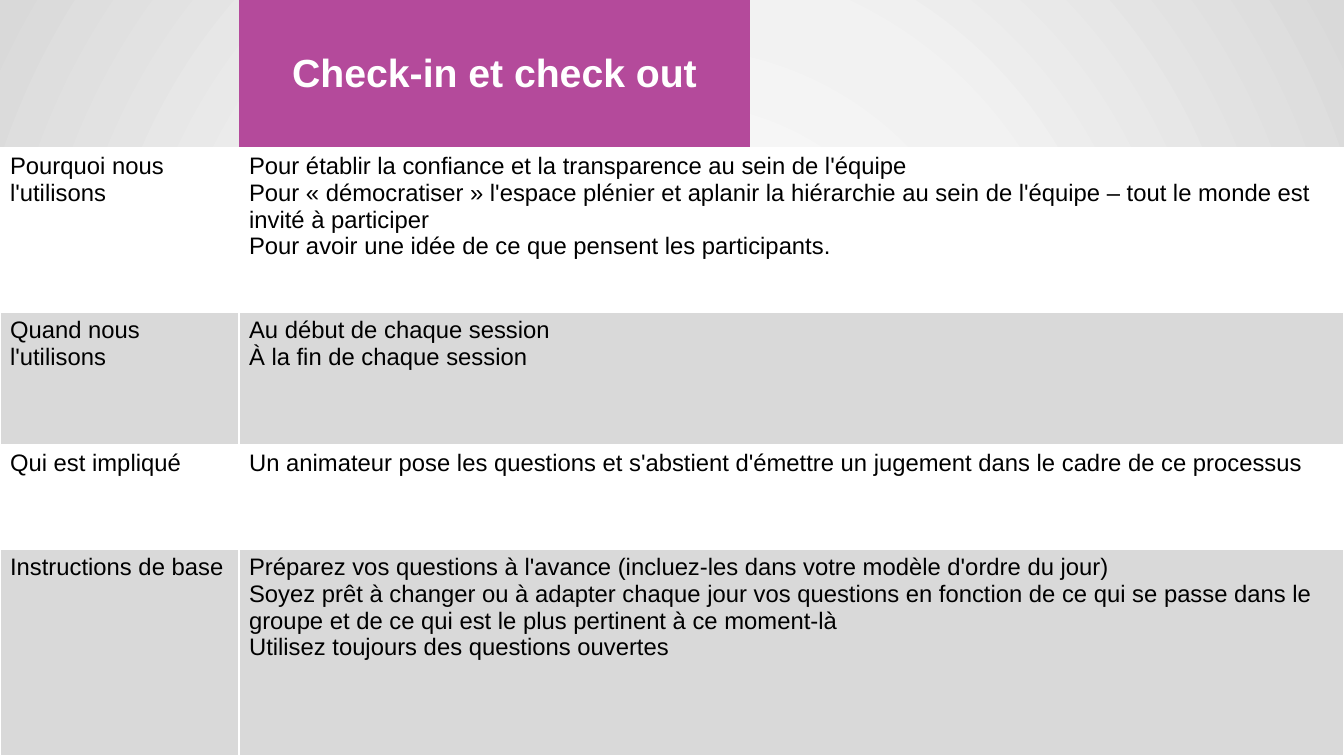
"""Build the check-in and check-out facilitation slide."""
from dataclasses import dataclass

from lxml import etree
from pptx import Presentation
from pptx.dml.color import RGBColor
from pptx.enum.text import MSO_ANCHOR, PP_ALIGN
from pptx.oxml.ns import qn
from pptx.util import Emu, Pt

CENTER, LEFT = PP_ALIGN.CENTER, PP_ALIGN.LEFT
MIDDLE, TOP = MSO_ANCHOR.MIDDLE, MSO_ANCHOR.TOP
EMU_PER_PX = 12192000 / 1344
WIDTH, HEIGHT = 1344, 756

COLUMN_WIDTHS = (239, 511, 258, 336)
ROW_HEIGHTS = (148, 164, 133, 104, 207)
HEADING = "Check-in et check out"
TOPICS = (
    ("Pourquoi nous l'utilisons", (
        "Pour établir la confiance et la transparence au sein de l'équipe",
        "Pour « démocratiser » l'espace plénier et aplanir la hiérarchie au sein "
        "de l'équipe – tout le monde est invité à participer",
        "Pour avoir une idée de ce que pensent les participants.",
    )),
    ("Quand nous l'utilisons", (
        "Au début de chaque session",
        "À la fin de chaque session",
    )),
    ("Qui est impliqué", (
        "Un animateur pose les questions et s'abstient d'émettre un jugement "
        "dans le cadre de ce processus",
    )),
    ("Instructions de base", (
        "Préparez vos questions à l'avance (incluez-les dans votre modèle "
        "d'ordre du jour)",
        "Soyez prêt à changer ou à adapter chaque jour vos questions en fonction "
        "de ce qui se passe dans le groupe et de ce qui est le plus pertinent à "
        "ce moment-là",
        "Utilisez toujours des questions ouvertes",
    )),
)


@dataclass(frozen=True)
class Theme:
    """Colours, font and type sizes of the slide."""
    font: str = "Arial"
    heading_size: int = 28
    body_size: int = 17
    ink: str = "000000"
    white: str = "FFFFFF"
    accent: str = "B44A9B"
    bands: tuple = ("FFFFFF", "D9D9D9")
    backdrop: tuple = ((0, "FFFFFF"), (50, "F2F2F2"), (100, "D9D9D9"))


def px(length):
    """Turn pixels into EMU."""
    return Emu(round(length * EMU_PER_PX))


def add_color(parent, color):
    """Append an RGB colour element."""
    etree.SubElement(parent, qn("a:srgbClr"), val=color)


class SlideBuilder:
    """Draw elements on one slide in one theme."""

    def __init__(self, slide, theme):
        """Keep the slide and its theme."""
        self.slide = slide
        self.theme = theme

    def backdrop(self):
        """Fill the background with a radial gradient."""
        self.slide.background.fill.gradient()
        gradient = next(self.slide.element.iter(qn("a:gradFill")))
        gradient.clear()
        stops = etree.SubElement(gradient, qn("a:gsLst"))
        for percent, color in self.theme.backdrop:
            add_color(etree.SubElement(stops, qn("a:gs"), pos=str(percent * 1000)), color)
        circle = etree.SubElement(gradient, qn("a:path"), path="circle")
        etree.SubElement(circle, qn("a:fillToRect"), dict.fromkeys("ltrb", "50000"))

    def grid(self, widths, heights):
        """Add a plain table with the given column widths and row heights."""
        table = self.slide.shapes.add_table(
            len(heights), len(widths), 0, 0, px(sum(widths)), px(sum(heights))).table
        table.first_row = table.horz_banding = False
        for column, width in zip(table.columns, widths):
            column.width = px(width)
        for row, height in zip(table.rows, heights):
            row.height = px(height)
        return table

    def borders(self, cell, color=None, sides="LRTB"):
        """Draw the sides of a cell, or hide them when no colour is given."""
        properties = cell._tc.get_or_add_tcPr()
        for side in sides:
            line = etree.SubElement(properties, qn(f"a:ln{side}"), w=str(Pt(1)))
            if color:
                add_color(etree.SubElement(line, qn("a:solidFill")), color)
            else:
                etree.SubElement(line, qn("a:noFill"))

    def fill(self, cell, color=None):
        """Fill a cell, or clear it when no colour is given."""
        if color:
            cell.fill.solid()
            cell.fill.fore_color.rgb = RGBColor.from_string(color)
        else:
            cell.fill.background()

    def set_text(self, cell, lines, size, color, bold=False, align=LEFT, anchor=TOP):
        """Put formatted paragraphs into a cell."""
        cell.text = "\n".join(lines)
        cell.vertical_anchor = anchor
        style = {"name": self.theme.font, "size": Pt(size), "bold": bold}
        for paragraph in cell.text_frame.paragraphs:
            paragraph.alignment = align
            for run in paragraph.runs:
                for attribute, value in style.items():
                    setattr(run.font, attribute, value)
                run.font.color.rgb = RGBColor.from_string(color)

    def heading_row(self, table, heading):
        """Set the heading in the second column, with clear cells around it."""
        theme = self.theme
        for column in range(len(table.columns)):
            cell = table.cell(0, column)
            self.borders(cell)
            self.fill(cell, theme.accent if column == 1 else None)
        self.set_text(table.cell(0, 1), [heading], theme.heading_size, theme.white,
                      bold=True, align=CENTER, anchor=MIDDLE)

    def topic_row(self, table, row, topic, answers):
        """Set a topic and its answers in one banded row."""
        theme = self.theme
        table.cell(row, 1).merge(table.cell(row, len(table.columns) - 1))
        for column, lines in enumerate(([topic], answers)):
            cell = table.cell(row, column)
            self.borders(cell, theme.white, "LRB" if row == 1 else "LRTB")
            self.fill(cell, theme.bands[(row - 1) % len(theme.bands)])
            self.set_text(cell, lines, theme.body_size, theme.ink)


def main():
    """Build and save the slide."""
    deck = Presentation()
    deck.slide_width, deck.slide_height = px(WIDTH), px(HEIGHT)
    builder = SlideBuilder(deck.slides.add_slide(deck.slide_layouts[6]), Theme())
    builder.backdrop()
    guide = builder.grid(COLUMN_WIDTHS, ROW_HEIGHTS)
    builder.heading_row(guide, HEADING)
    for row, (topic, answers) in enumerate(TOPICS, start=1):
        builder.topic_row(guide, row, topic, answers)
    deck.save("out.pptx")


if __name__ == "__main__":
    main()
